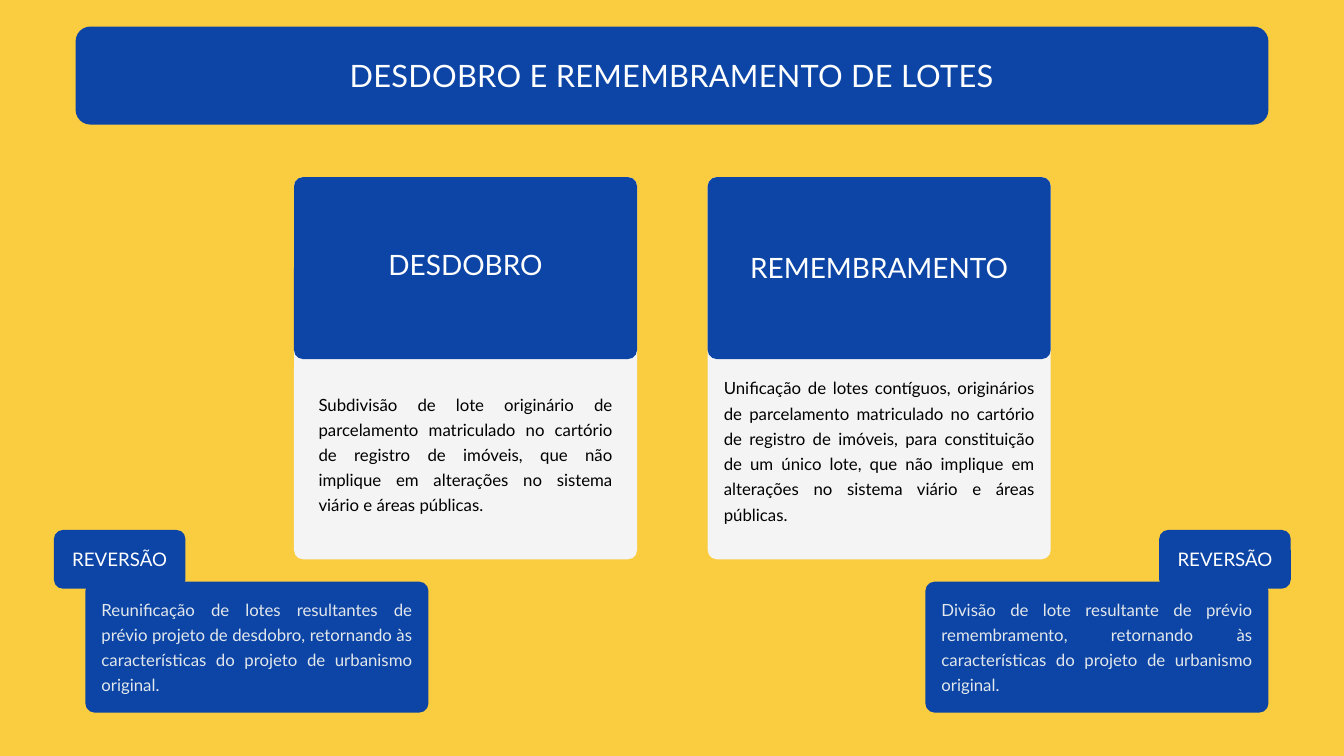
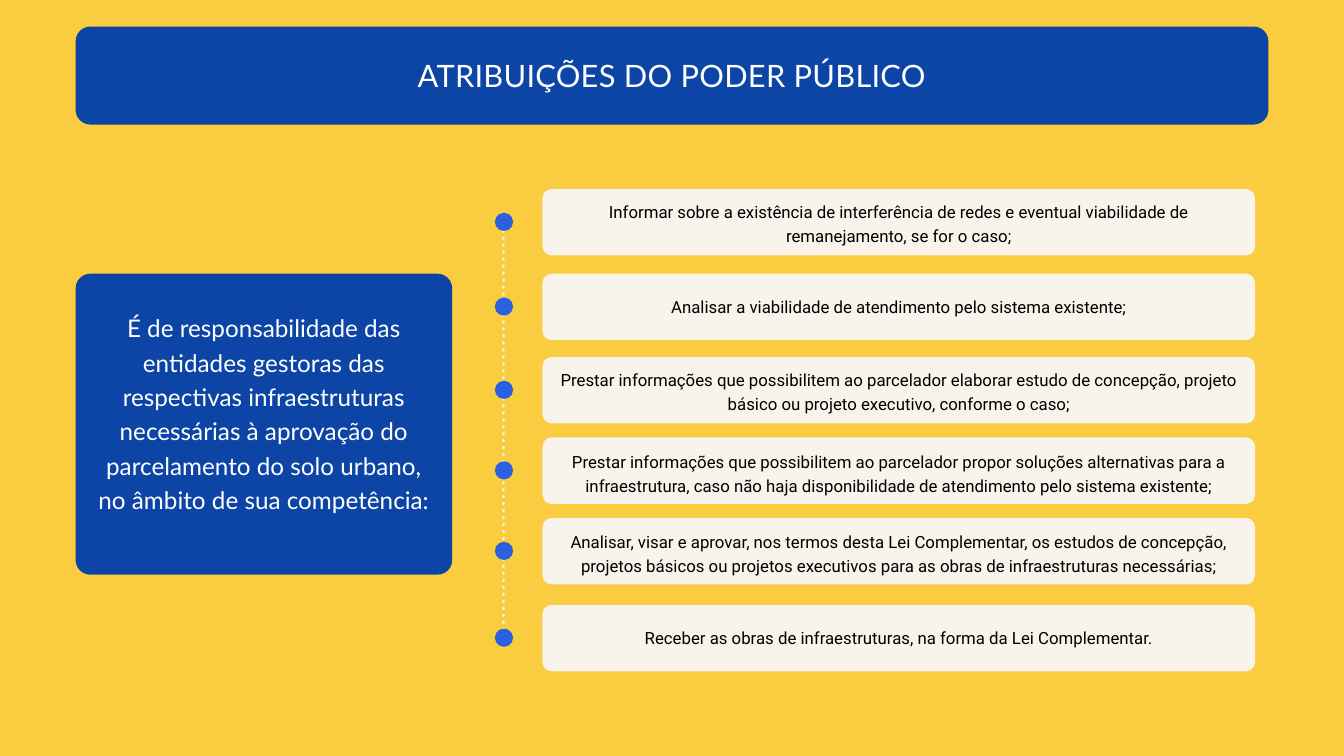
from lxml import etree
from pptx import Presentation
from pptx.dml.color import RGBColor
from pptx.enum.dml import MSO_LINE
from pptx.enum.shapes import MSO_CONNECTOR, MSO_SHAPE
from pptx.enum.text import MSO_ANCHOR, MSO_AUTO_SIZE, PP_ALIGN as Align
from pptx.oxml.ns import qn
from pptx.util import Pt

PX = 9525  # EMU per px: a slide is 1920 x 1080 px


def color(value):
    return RGBColor.from_string(value)


YELLOW, BLUE, DOT_BLUE = "FACC40", "0C45A6", "2B60E1"
WHITE, BLACK, GREY, CREAM, PALE = "FFFFFF", "000000", "F4F4F4", "F8F4EB", "E2E7EB"


def add_block(slide, left, top, width, height, fill, radius=13):
    """Add a plain block with rounded corners."""
    block = slide.shapes.add_shape(
        MSO_SHAPE.ROUNDED_RECTANGLE, left * PX, top * PX, width * PX, height * PX)
    block.adjustments[0] = radius / min(width, height)
    block.shadow.inherit = False
    block.fill.solid()
    block.fill.fore_color.rgb = color(fill)
    block.line.fill.background()
    return block


def set_text(shape, text, size, spacing, ink, align=Align.CENTER, font="Lato"):
    """Fill a text box or placeholder with one paragraph."""
    frame = shape.text_frame
    frame.word_wrap = True
    frame.auto_size = MSO_AUTO_SIZE.NONE
    frame.vertical_anchor = MSO_ANCHOR.TOP
    frame.margin_left = frame.margin_top = frame.margin_right = frame.margin_bottom = 0
    frame.text = text
    paragraph = frame.paragraphs[0]
    paragraph.alignment = align
    paragraph.line_spacing = Pt(spacing)
    paragraph.font.name = font
    paragraph.font.size = Pt(size)
    paragraph.font.color.rgb = color(ink)


presentation = Presentation()
presentation.slide_width, presentation.slide_height = 1920 * PX, 1080 * PX
background = presentation.slide_master.background.fill
background.solid()
background.fore_color.rgb = color(YELLOW)

# Slides with their title bands
slides = []
for heading in ("DESDOBRO E REMEMBRAMENTO DE LOTES", "ATRIBUIÇÕES DO PODER PÚBLICO"):
    slide = presentation.slides.add_slide(presentation.slide_layouts[5])
    title = slide.shapes.title
    title.left, title.top, title.width, title.height = 190 * PX, 77 * PX, 1540 * PX, 58 * PX
    set_text(title, heading, 33, 42.9, WHITE)
    for properties in title.element.iter(qn("a:defRPr")):
        properties.set("spc", "30")
    band = add_block(slide, 108, 38, 1704, 140, BLUE, radius=21)
    title.element.addprevious(band.element)
    slides.append(slide)
lots_slide, duties_slide = slides

# Slide 1: definition cards
CARD_WIDTH = 490
cards = [
    (420, "DESDOBRO", 350, 35, 556,
     "Subdivisão de lote originário de parcelamento matriculado no cartório de registro "
     "de imóveis, que não implique em alterações no sistema viário e áreas públicas."),
    (1011, "REMEMBRAMENTO", 354, 23, 533,
     "Unificação de lotes contíguos, originários de parcelamento matriculado no cartório "
     "de registro de imóveis, para constituição de um único lote, que não implique em "
     "alterações no sistema viário e áreas públicas."),
]
for left, name, name_top, inset, body_top, definition in cards:
    add_block(lots_slide, left, 253, CARD_WIDTH, 546, GREY)
    add_block(lots_slide, left, 253, CARD_WIDTH, 260, BLUE)
    name_box = lots_slide.shapes.add_textbox(
        left * PX, name_top * PX, CARD_WIDTH * PX, 53 * PX)
    set_text(name_box, name, 30, 39, WHITE)
    body_box = lots_slide.shapes.add_textbox(
        (left + inset) * PX, body_top * PX, (CARD_WIDTH - 2 * inset) * PX, 220 * PX)
    set_text(body_box, definition, 18, 27, BLACK, Align.JUSTIFY)

# Slide 1: reversal notes with their tabs
reversals = [
    (122, 77,
     "Reunificação de lotes resultantes de prévio projeto de desdobro, retornando às "
     "características do projeto de urbanismo original."),
    (1322, 1656,
     "Divisão de lote resultante de prévio remembramento, retornando às "
     "características do projeto de urbanismo original."),
]
for left, tab_left, note in reversals:
    add_block(lots_slide, left, 831, CARD_WIDTH, 187, BLUE)
    add_block(lots_slide, tab_left, 757, 188, 84, BLUE)
    note_box = lots_slide.shapes.add_textbox(
        (left + 23) * PX, 849 * PX, (CARD_WIDTH - 46) * PX, 144 * PX)
    set_text(note_box, note, 18, 27, PALE, Align.JUSTIFY)
    tab_box = lots_slide.shapes.add_textbox(tab_left * PX, 780 * PX, 188 * PX, 36 * PX)
    set_text(tab_box, "REVERSÃO", 20, 26, WHITE)

# Slide 2: responsibility panel
add_block(duties_slide, 108, 391, 538, 430, BLUE, radius=21)
panel_box = duties_slide.shapes.add_textbox(131 * PX, 440 * PX, 492 * PX, 343 * PX)
set_text(panel_box,
         "É de responsabilidade das entidades gestoras das respectivas infraestruturas "
         "necessárias à aprovação do parcelamento do solo urbano, no âmbito de sua "
         "competência:", 26, 36.9, WHITE)

# Slide 2: dotted timeline
timeline = duties_slide.shapes.add_connector(
    MSO_CONNECTOR.STRAIGHT, 719 * PX, 909 * PX, 719 * PX, 315 * PX)
timeline.line.color.rgb = color(GREY)
timeline.line.width = Pt(3.75)
timeline.line.dash_style = MSO_LINE.ROUND_DOT
timeline_properties = timeline.element.spPr
timeline_properties.find(qn("a:ln")).set("cap", "rnd")
etree.SubElement(timeline_properties, qn("a:effectLst"))

# Slide 2: duties, each with its dot
duties = [
    (270, 283, "Informar sobre a existência de interferência de redes e eventual "
               "viabilidade de remanejamento, se for o caso;"),
    (391, 419, "Analisar a viabilidade de atendimento pelo sistema existente;"),
    (510, 523, "Prestar informações que possibilitem ao parcelador elaborar estudo de "
               "concepção, projeto básico ou projeto executivo, conforme o caso;"),
    (625, 640, "Prestar informações que possibilitem ao parcelador propor soluções "
               "alternativas para a infraestrutura, caso não haja disponibilidade de "
               "atendimento pelo sistema existente;"),
    (740, 754, "Analisar, visar e aprovar, nos termos desta Lei Complementar, os estudos "
               "de concepção, projetos básicos ou projetos executivos para as obras de "
               "infraestruturas necessárias;"),
    (864, 892, "Receber as obras de infraestruturas, na forma da Lei Complementar."),
]
for top, text_top, duty in duties:
    add_block(duties_slide, 775, top, 1018, 95, CREAM)
    add_block(duties_slide, 707, top + 34, 26, 26, DOT_BLUE)
    duty_box = duties_slide.shapes.add_textbox(796 * PX, text_top * PX, 976 * PX, 68 * PX)
    set_text(duty_box, duty, 18, 25.6, BLACK, font="Roboto")

presentation.save("out.pptx")
